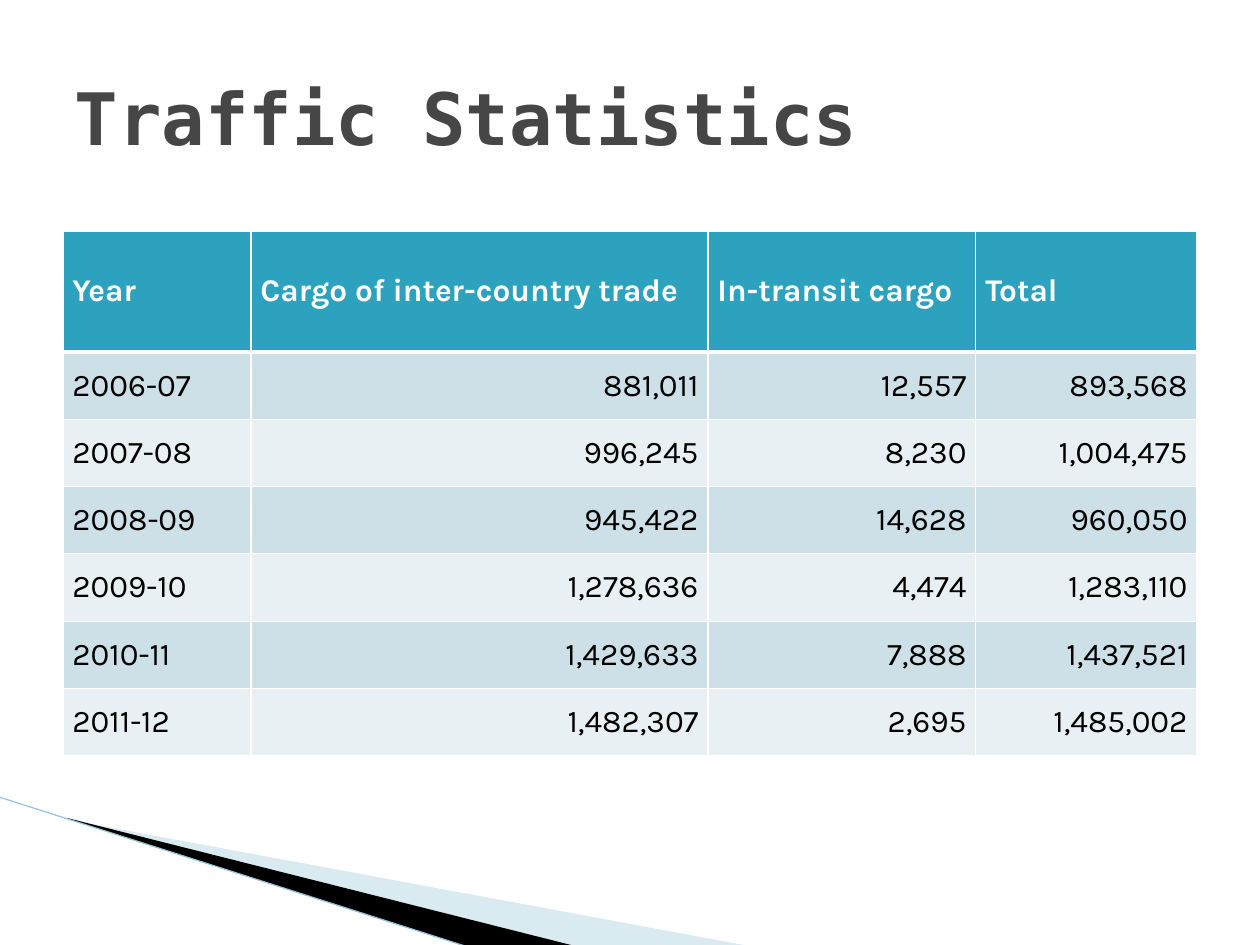
from dataclasses import dataclass

from lxml import etree
from pptx import Presentation
from pptx.dml.color import RGBColor
from pptx.enum.shapes import MSO_CONNECTOR
from pptx.enum.text import MSO_ANCHOR, PP_ALIGN
from pptx.oxml.ns import qn
from pptx.util import Pt

STRAIGHT = MSO_CONNECTOR.STRAIGHT
MIDDLE = MSO_ANCHOR.MIDDLE
LEFT, RIGHT = PP_ALIGN.LEFT, PP_ALIGN.RIGHT
PX = 9666


@dataclass(frozen=True)
class Theme:
    title_font: str = "DejaVu Sans Mono"
    body_font: str = "Karla"
    title_size: int = 55
    body_size: int = 24
    title: str = "464646"
    header: str = "2DA2BF"
    bands: tuple = ("CDE0E8", "E8F0F4")
    white: str = "FFFFFF"
    black: str = "000000"
    pale_wedge: str = "A0CBDC"
    wedge_line: str = "97C5D8"


THEME = Theme()
HEADINGS = ("Year", "Cargo of inter-country trade", "In-transit cargo", "Total")
TRAFFIC = (
    ("2006-07", 881011, 12557),
    ("2007-08", 996245, 8230),
    ("2008-09", 945422, 14628),
    ("2009-10", 1278636, 4474),
    ("2010-11", 1429633, 7888),
    ("2011-12", 1482307, 2695),
)
COLUMNS = (188, 457, 268, 221)
HEADER_HEIGHT = 121


def px(n):
    return round(n * PX)


def write(p, text, **formats):
    r = p.add_run()
    r.text = text
    r.font.color.rgb = RGBColor.from_string(formats.pop("color"))
    for name, value in formats.items():
        setattr(r.font, name, value)


def add_wedge(slide, left, top, points, color, alpha=None):
    points = [(px(left + x), px(top + y)) for x, y in points]
    builder = slide.shapes.build_freeform(*points[0])
    builder.add_line_segments(points[1:])
    sp = builder.convert_to_shape()
    sp.shadow.inherit = False
    sp.fill.solid()
    sp.fill.fore_color.rgb = RGBColor.from_string(color)
    sp.line.fill.background()
    if alpha:
        clr = sp.fill._xPr.find(".//" + qn("a:srgbClr"))
        etree.SubElement(clr, qn("a:alpha"), val=str(alpha * 1000))


def add_corner(slide, left, top, width, height):
    add_wedge(slide, left, top,
              [(70, 23), (width, height), (575, height), (70, 22)],
              THEME.pale_wedge, 40)
    add_wedge(slide, left, top,
              [(68, 21), (576, height), (469, height + 1), (69, 22)],
              THEME.black)
    line = slide.shapes.add_connector(
        STRAIGHT, px(left), px(top), px(left + 469), px(top + height + 1))
    line.line.color.rgb = RGBColor.from_string(THEME.wedge_line)
    line.line.width = Pt(0.95)
    etree.SubElement(line._element.spPr, qn("a:effectLst"))


def add_title(slide, left, top, width, height):
    sp = slide.shapes.add_textbox(*map(px, (left, top, width, height)))
    tf = sp.text_frame
    formats = dict(word_wrap=True, vertical_anchor=MIDDLE,
                   margin_left=px(12), margin_right=px(12),
                   margin_top=px(7), margin_bottom=px(7))
    for name, value in formats.items():
        setattr(tf, name, value)
    write(tf.paragraphs[0], "Traffic Statistics", name=THEME.title_font,
          size=Pt(THEME.title_size), bold=True, color=THEME.title)


def set_borders(cell, widths):
    tcPr = cell._tc.get_or_add_tcPr()
    for side, width in widths.items():
        ln = etree.SubElement(tcPr, qn("a:ln" + side), w=str(Pt(width)))
        fill = etree.SubElement(ln, qn("a:solidFill"))
        etree.SubElement(fill, qn("a:srgbClr"), val=THEME.white)


def add_traffic_table(slide, left, top, width, height):
    rows = [HEADINGS] + [
        (year, f"{trade:,}", f"{transit:,}", f"{trade + transit:,}")
        for year, trade, transit in TRAFFIC]
    table = slide.shapes.add_table(
        len(rows), len(COLUMNS), *map(px, (left, top, width, height))).table
    for column, column_width in zip(table.columns, COLUMNS):
        column.width = px(column_width)
    row_height = (height - HEADER_HEIGHT) / len(TRAFFIC)
    for i, texts in enumerate(rows):
        header = i == 0
        table.rows[i].height = px(HEADER_HEIGHT if header else row_height)
        for j, text in enumerate(texts):
            cell = table.cell(i, j)
            set_borders(cell, {"L": 1, "R": 1, "T": 3 if i == 1 else 1,
                               "B": 3 if header else 1})
            cell.fill.solid()
            cell.fill.fore_color.rgb = RGBColor.from_string(
                THEME.header if header else THEME.bands[(i - 1) % 2])
            cell.vertical_anchor = MIDDLE
            p = cell.text_frame.paragraphs[0]
            p.alignment = LEFT if header or j == 0 else RIGHT
            write(p, text, name=THEME.body_font, size=Pt(THEME.body_size),
                  bold=header, color=THEME.white if header else THEME.black)


def main():
    prs = Presentation()
    prs.slide_width, prs.slide_height = px(1260), px(945)
    slide = prs.slides.add_slide(prs.slide_layouts[6])
    add_corner(slide, -1, 797, 750, 149)
    add_title(slide, 63, 38, 1134, 157)
    add_traffic_table(slide, 63, 231, 1134, 525)
    prs.save("out.pptx")


if __name__ == "__main__":
    main()
